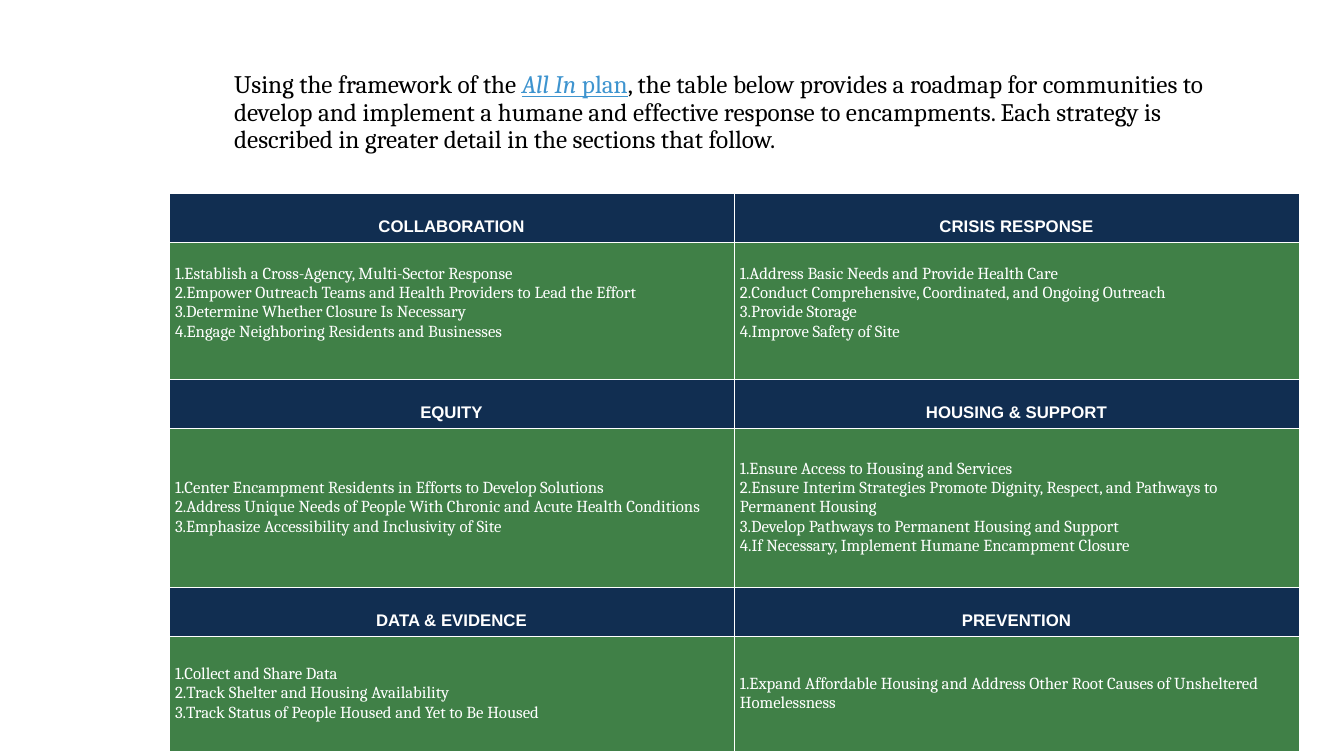
from lxml.etree import SubElement
from pptx import Presentation
from pptx.dml.color import RGBColor
from pptx.enum.text import MSO_ANCHOR, MSO_AUTO_SIZE, PP_ALIGN
from pptx.oxml.ns import qn
from pptx.util import Pt

PX = 914400 / 100.8
NAVY = RGBColor(0x11, 0x2E, 0x51)
GREEN = RGBColor(0x40, 0x80, 0x47)
BLUE = RGBColor(0x3E, 0x94, 0xCF)
BLACK = RGBColor(0, 0, 0)
WHITE = RGBColor(255, 255, 255)

HEADS = [
    ("COLLABORATION", "CRISIS RESPONSE"),
    ("EQUITY", "HOUSING & SUPPORT"),
    ("DATA & EVIDENCE", "PREVENTION"),
]
STEPS = [
    (["Establish a Cross-Agency, Multi-Sector Response",
      "Empower Outreach Teams and Health Providers to Lead the Effort",
      "Determine Whether Closure Is Necessary",
      "Engage Neighboring Residents and Businesses"],
     ["Address Basic Needs and Provide Health Care",
      "Conduct Comprehensive, Coordinated, and Ongoing Outreach",
      "Provide Storage",
      "Improve Safety of Site"]),
    (["Center Encampment Residents in Efforts to Develop Solutions",
      "Address Unique Needs of People With Chronic and Acute Health Conditions",
      "Emphasize Accessibility and Inclusivity of Site"],
     ["Ensure Access to Housing and Services",
      "Ensure Interim Strategies Promote Dignity, Respect, and Pathways to Permanent Housing",
      "Develop Pathways to Permanent Housing and Support",
      "If Necessary, Implement Humane Encampment Closure"]),
    (["Collect and Share Data",
      "Track Shelter and Housing Availability",
      "Track Status of People Housed and Yet to Be Housed"],
     ["Expand Affordable Housing and Address Other Root Causes of Unsheltered Homelessness"]),
]
HEAD_H = 49
STEP_H = [137, 159, 115]
COL_W = 565


def px(n):
    return round(n * PX)


def fill_cell(cell, lines, color, top, anchor, head):
    """Write a white-edged cell, as a bold heading or a numbered list."""
    cell.margin_left = cell.margin_right = px(6)
    cell.margin_top, cell.margin_bottom = px(top), px(3)
    cell.vertical_anchor = anchor
    frame = cell.text_frame
    frame.text = "\n".join(lines)
    for para in frame.paragraphs:
        if head:
            para.alignment = PP_ALIGN.CENTER
        else:
            props = para._p.get_or_add_pPr()
            props.set("marL", "0")
            props.set("indent", "0")
            SubElement(props, qn("a:buAutoNum"), type="arabicPeriod")
        para.font.name = "Arial" if head else "Cambria"
        para.font.size = Pt(12)
        para.font.bold = head
        para.font.color.rgb = WHITE
    for side in ("a:lnL", "a:lnR", "a:lnT", "a:lnB"):
        line = SubElement(cell._tc.get_or_add_tcPr(), qn(side), w=str(Pt(0.38)))
        paint = SubElement(line, qn("a:solidFill"))
        SubElement(paint, qn("a:srgbClr"), val=str(WHITE))
    cell.fill.solid()
    cell.fill.fore_color.rgb = color


deck = Presentation()
deck.slide_width, deck.slide_height = px(1344), px(756)
slide = deck.slides.add_slide(deck.slide_layouts[5])

title = slide.shapes.title
title.left, title.top, title.width, title.height = px(224), px(40), px(1033), px(146)
frame = title.text_frame
frame.word_wrap = True
frame.auto_size = MSO_AUTO_SIZE.NONE
frame.vertical_anchor = MSO_ANCHOR.MIDDLE
intro = frame.paragraphs[0]
intro.alignment = PP_ALIGN.LEFT
intro.line_spacing = 0.9
intro.font.name = "Cambria"
intro.font.size = Pt(18)
for text, color, italic, under in [
    ("Using the framework of the ", BLACK, False, False),
    ("All In ", BLUE, True, True),
    ("plan", BLUE, False, True),
    (", the table below provides a roadmap for communities to develop and "
     "implement a humane and effective response to encampments. Each strategy "
     "is described in greater detail in the sections that follow.",
     BLACK, False, False),
]:
    run = intro.add_run()
    run.text = text
    run.font.color.rgb = color
    run.font.italic = italic
    run.font.underline = under

height = sum(STEP_H) + HEAD_H * len(HEADS)
table = slide.shapes.add_table(
    2 * len(HEADS), 2, px(169), px(193), px(2 * COL_W), px(height)).table
table.first_row = table.horz_banding = False
for col in table.columns:
    col.width = px(COL_W)
for i, (heads, steps) in enumerate(zip(HEADS, STEPS)):
    table.rows[2 * i].height = px(HEAD_H)
    table.rows[2 * i + 1].height = px(STEP_H[i])
    top, anchor = (22, MSO_ANCHOR.TOP) if i == 0 else (3, MSO_ANCHOR.MIDDLE)
    for j in range(2):
        fill_cell(table.cell(2 * i, j), [heads[j]], NAVY, 22, MSO_ANCHOR.MIDDLE, True)
        fill_cell(table.cell(2 * i + 1, j), steps[j], GREEN, top, anchor, False)

deck.save("out.pptx")
